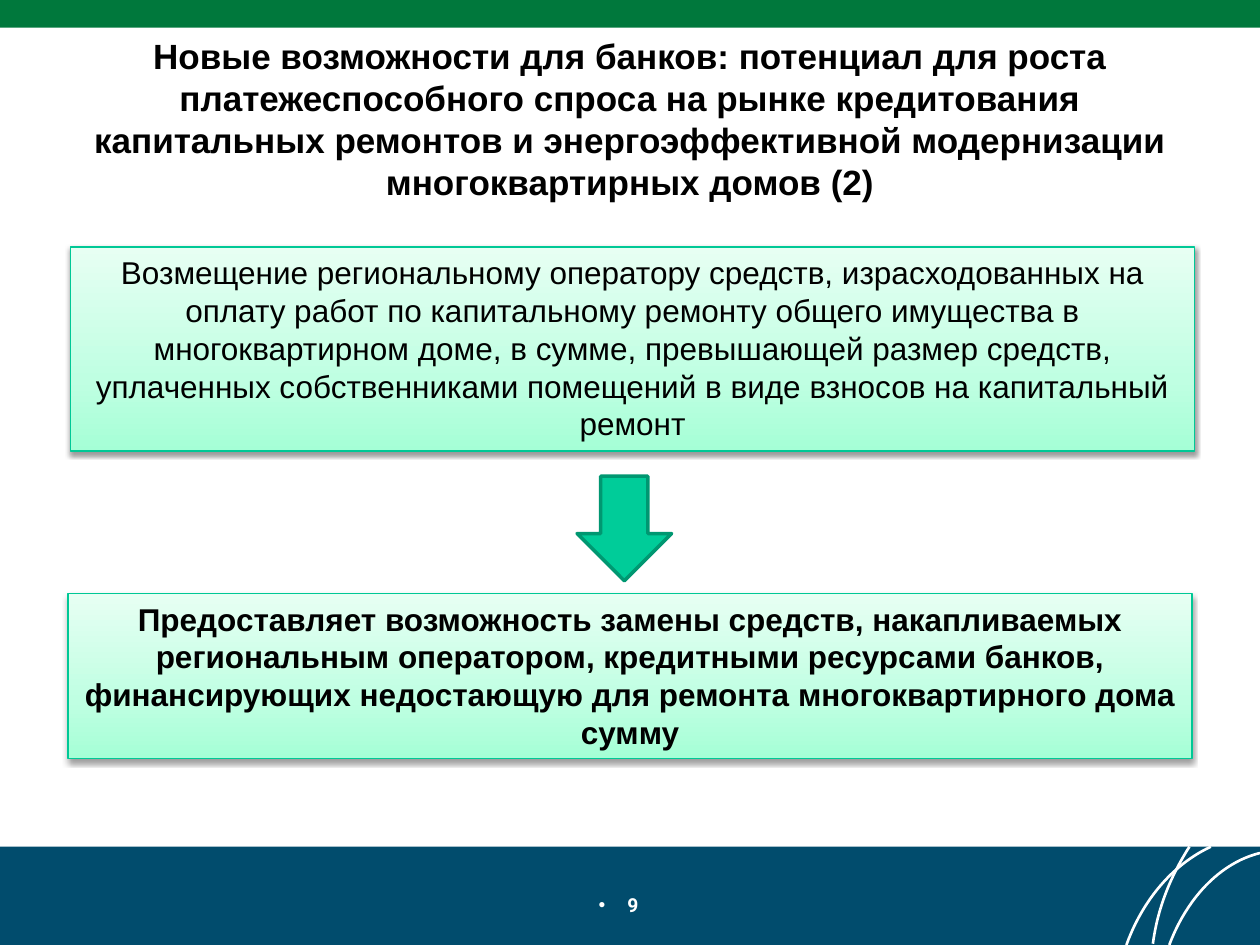
import pptx
import pptx.dml.color
import pptx.enum.shapes
import pptx.enum.text
import pptx.oxml
import pptx.oxml.ns
import pptx.util

Inches = pptx.util.Inches
Pt = pptx.util.Pt
SHAPES = pptx.enum.shapes.MSO_SHAPE
ANCHORS = pptx.enum.text.MSO_ANCHOR
NAMESPACE = pptx.oxml.ns.nsdecls("a")

COLORS = {
    "white": "FFFFFF",
    "black": "000000",
    "navy": "014C6D",
    "green": "00783C",
    "panel_edge": "00C896",
    "arrow": "00CC99",
    "arrow_edge": "009771",
}
PANEL_STOPS = [(0, "A5FFD6"), (35, "BFFFE2"), (100, "E7FFF3")]
FOOTER_CURVES = [
    [(0.67, 0), (0.37, 0.14), (0.13, 0.42), (0, 0.78)],
    [(1.06, 0.05), (0.74, 0.13), (0.48, 0.41), (0.34, 0.78)],
    [(0.5, 0), (0.36, 0.22), (0.25, 0.47), (0.21, 0.77)],
]
TITLE = (
    "Новые возможности для банков: потенциал для роста платежеспособного спроса "
    "на рынке кредитования капитальных ремонтов и энергоэффективной модернизации "
    "многоквартирных домов (2)"
)
REFUND = (
    "Возмещение региональному оператору средств, израсходованных на оплату работ "
    "по капитальному ремонту общего имущества в многоквартирном доме, в сумме, "
    "превышающей размер средств, уплаченных собственниками помещений в виде "
    "взносов на капитальный ремонт"
)
OPPORTUNITY = (
    "Предоставляет возможность замены средств, накапливаемых региональным "
    "оператором, кредитными ресурсами банков, финансирующих недостающую для "
    "ремонта многоквартирного дома сумму"
)


def rgb(name):
    """Return the named colour."""
    return pptx.dml.color.RGBColor.from_string(COLORS[name])


def add_solid(page, kind, box, fill, edge=None, width=0):
    """Add a flat preset shape."""
    shape = page.shapes.add_shape(kind, *map(Inches, box))
    shape.shadow.inherit = False
    shape.fill.solid()
    shape.fill.fore_color.rgb = rgb(fill)
    if edge:
        shape.line.color.rgb = rgb(edge)
        shape.line.width = Pt(width)
    else:
        shape.line.fill.background()
    return shape


def write_text(shape, text, size, color="black", bold=False, font="Arial", anchor=ANCHORS.TOP):
    """Write one centred paragraph and return it."""
    frame = shape.text_frame
    frame.word_wrap = True
    frame.vertical_anchor = anchor
    para = frame.paragraphs[0]
    para.text = text
    para.alignment = pptx.enum.text.PP_ALIGN.CENTER
    para.font.name = font
    para.font.size = Pt(size)
    para.font.bold = bold
    para.font.color.rgb = rgb(color)
    return para


def add_title(page, box):
    """Add the slide heading."""
    shape = page.shapes.add_textbox(*map(Inches, box))
    write_text(shape, TITLE, 20, bold=True, anchor=ANCHORS.MIDDLE)


def add_panel(page, box, text, bold=False):
    """Add a gradient panel with a soft shadow."""
    panel = add_solid(page, SHAPES.RECTANGLE, box, "white", "panel_edge", 0.75)
    properties = panel.element.spPr
    stops = "".join(
        f'<a:gs pos="{place * 1000}"><a:srgbClr val="{color}"/></a:gs>'
        for place, color in PANEL_STOPS
    )
    gradient = pptx.oxml.parse_xml(
        f'<a:gradFill {NAMESPACE} rotWithShape="1"><a:gsLst>{stops}</a:gsLst>'
        '<a:lin ang="16200000" scaled="0"/></a:gradFill>'
    )
    properties.replace(properties.find(pptx.oxml.ns.qn("a:solidFill")), gradient)
    shadow = pptx.oxml.parse_xml(
        f'<a:outerShdw {NAMESPACE} blurRad="{Pt(3.1)}" dist="{Pt(1.6)}" dir="5400000" '
        f'rotWithShape="0"><a:srgbClr val="{COLORS["black"]}">'
        '<a:alpha val="38000"/></a:srgbClr></a:outerShdw>'
    )
    properties.find(pptx.oxml.ns.qn("a:effectLst")).append(shadow)
    write_text(panel, text, 18, bold=bold)


def curve_points(controls, steps=24):
    """Return points along a cubic curve."""
    points = []
    for step in range(steps + 1):
        t = step / steps
        weights = [(1 - t) ** 3, 3 * t * (1 - t) ** 2, 3 * t**2 * (1 - t), t**3]
        points.append(tuple(sum(w * c[axis] for w, c in zip(weights, controls)) for axis in (0, 1)))
    return points


def add_curve(page, left, top, controls):
    """Add one white footer arc."""
    points = [(Inches(left + x), Inches(top + y)) for x, y in curve_points(controls)]
    builder = page.shapes.build_freeform(*points[0])
    builder.add_line_segments(points[1:], close=False)
    arc = builder.convert_to_shape()
    arc.shadow.inherit = False
    arc.fill.background()
    arc.line.color.rgb = rgb("white")
    arc.line.width = Pt(1.5)


def add_page_number(page, box):
    """Add the bulleted page number."""
    shape = page.shapes.add_textbox(*map(Inches, box))
    shape.text_frame.margin_right = Inches(0.28)
    para = shape.text_frame.paragraphs[0]
    properties = para._p.get_or_add_pPr()
    properties.set("marL", str(Inches(0.23)))
    properties.set("indent", str(-Inches(0.23)))
    properties.append(pptx.oxml.parse_xml(f'<a:buFont {NAMESPACE} typeface="Arial"/>'))
    properties.append(pptx.oxml.parse_xml(f'<a:buChar {NAMESPACE} char="•"/>'))
    write_text(shape, "9", 11, "white", True, "Roboto")


def add_footer(page, box):
    """Add the footer band, its arcs and the page number."""
    left, top, width, height = box
    add_solid(page, SHAPES.RECTANGLE, box, "navy")
    for controls in FOOTER_CURVES:
        add_curve(page, left + width - 1.06, top, controls)
    add_page_number(page, (left + (width - 2.06) / 2, top + 0.32, 2.06, 0.31))


def build_slide(page):
    """Place every region on the slide."""
    add_footer(page, (0, 6.72, 10, 0.78))
    add_solid(page, SHAPES.RECTANGLE, (0, 0, 10, 0.22), "green")
    add_title(page, (0.5, 0.44, 9, 1))
    add_panel(page, (0.56, 1.96, 8.92, 1.62), REFUND)
    add_panel(page, (0.54, 4.71, 8.92, 1.31), OPPORTUNITY, bold=True)
    add_solid(page, SHAPES.DOWN_ARROW, (4.58, 3.78, 0.75, 0.83), "arrow", "arrow_edge", 2)


def main():
    """Build and save the deck."""
    deck = pptx.Presentation()
    deck.slide_width = Inches(10)
    deck.slide_height = Inches(7.5)
    build_slide(deck.slides.add_slide(deck.slide_layouts[6]))
    deck.save("out.pptx")


if __name__ == "__main__":
    main()
